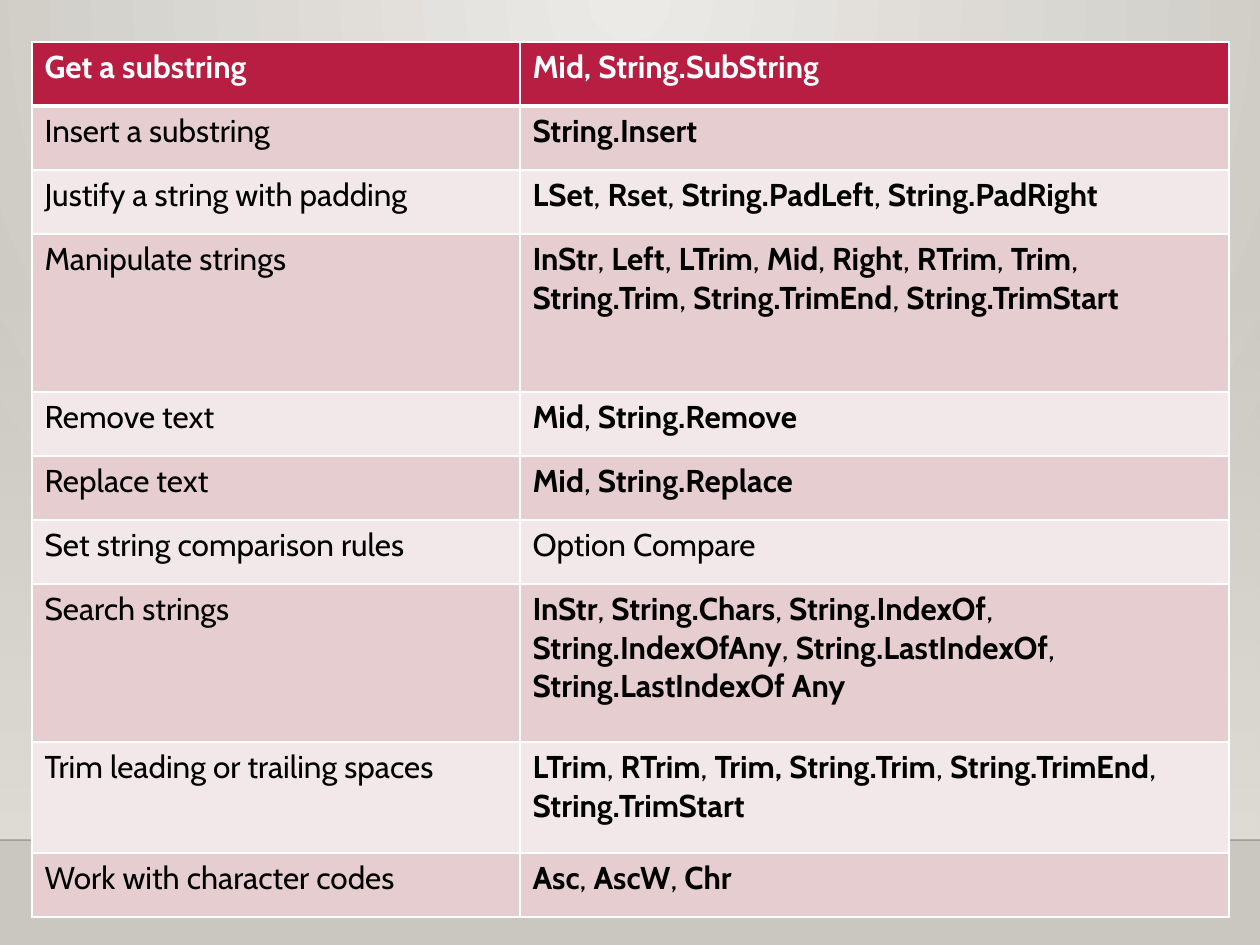
from pptx import Presentation
from pptx.dml.color import RGBColor
from pptx.enum.shapes import MSO_CONNECTOR as CONN, MSO_SHAPE as SHAPE
from pptx.oxml import parse_xml
from pptx.oxml.ns import nsdecls, qn
from pptx.util import Emu, Pt

PX = 914400 / 126
WIDTH, HEIGHT = 1260, 945
FONT = "Cabin"
CRIMSON, WHITE, BLACK = "B71E42", "FFFFFF", "000000"
BANDS = ("E6CDCF", "F3E8E9")
LINE_H, MEDIUM_H, TALL_H = 64, 111, 158

# Task, list of names, row height
HEADER = ("Get a substring", ["Mid, String.SubString"], LINE_H)
ROWS = [
    ("Insert a substring", ["String.Insert"], LINE_H),
    ("Justify a string with padding",
     ["LSet", "Rset", "String.PadLeft", "String.PadRight"], LINE_H),
    ("Manipulate strings",
     ["InStr", "Left", "LTrim", "Mid", "Right", "RTrim", "Trim",
      "String.Trim", "String.TrimEnd", "String.TrimStart"], TALL_H),
    ("Remove text", ["Mid", "String.Remove"], LINE_H),
    ("Replace text", ["Mid", "String.Replace"], LINE_H),
    ("Set string comparison rules", "Option Compare", LINE_H),
    ("Search strings",
     ["InStr", "String.Chars", "String.IndexOf", "String.IndexOfAny",
      "String.LastIndexOf", "String.LastIndexOf Any"], TALL_H),
    ("Trim leading or trailing spaces",
     ["LTrim", "RTrim", "Trim, String.Trim", "String.TrimEnd",
      "String.TrimStart"], MEDIUM_H),
    ("Work with character codes", ["Asc", "AscW", "Chr"], LINE_H),
]


def px(n):
    return Emu(round(n * PX))


def rgb(color):
    return RGBColor.from_string(color)


def set_gradient(owner, stops, shade):
    """Replace the owner's gradient; stops are (percent, colour, opacity)."""
    gs = "".join(
        f'<a:gs pos="{pos * 1000}"><a:srgbClr val="{color}">'
        f'<a:alpha val="{opacity * 1000}"/></a:srgbClr></a:gs>'
        for pos, color, opacity in stops)
    old = next(owner.iter(qn("a:gradFill")))
    old.getparent().replace(old, parse_xml(
        f'<a:gradFill {nsdecls("a")} rotWithShape="1">'
        f'<a:gsLst>{gs}</a:gsLst>{shade}</a:gradFill>'))


class Deck:
    """Holds the presentation, its style and the current slide."""

    def __init__(self):
        self.prs = Presentation()
        self.prs.slide_width, self.prs.slide_height = px(WIDTH), px(HEIGHT)
        self.s = self.prs.slides.add_slide(self.prs.slide_layouts[6])

    def background(self, inner, outer):
        self.s.background.fill.gradient()
        shade = ('<a:path path="circle"><a:fillToRect l="43000" t="0" '
                 'r="43000" b="100000"/></a:path>')
        set_gradient(self.s.background._cSld,
                     [(0, inner, 100), (100, outer, 100)], shade)

    def fade(self, x, y, w, h, color):
        """Rectangle that goes from clear at the top to solid below."""
        sp = self.s.shapes.add_shape(SHAPE.RECTANGLE, px(x), px(y), px(w), px(h))
        sp.shadow.inherit = False
        sp.line.fill.background()
        sp.fill.gradient()
        set_gradient(sp._element, [(0, color, 0), (100, color, 100)],
                     '<a:lin ang="5400000" scaled="0"/>')

    def rule(self, x1, y1, x2, y2, color, opacity):
        line = self.s.shapes.add_connector(
            CONN.STRAIGHT, px(x1), px(y1), px(x2), px(y2))
        line.line.width = Pt(1)
        line.line.color.rgb = rgb(color)
        clr = next(line._element.iter(qn("a:srgbClr")))
        clr.append(parse_xml(f'<a:alpha {nsdecls("a")} val="{opacity * 1000}"/>'))
        line._element.spPr.append(parse_xml(f'<a:effectLst {nsdecls("a")}/>'))

    def table(self, x, y, widths, header, rows):
        rows = [header, *rows]
        heights = [row[2] for row in rows]
        frame = self.s.shapes.add_table(len(rows), len(widths), px(x), px(y),
                                        px(sum(widths)), px(sum(heights)))
        table = frame.table
        for column, width in zip(table.columns, widths):
            column.width = px(width)
        for i, (task, names, height) in enumerate(rows):
            table.rows[i].height = px(height)
            fill = BANDS[(i - 1) % 2] if i else CRIMSON
            color = BLACK if i else WHITE
            for j, content in enumerate((task, names)):
                cell = table.cell(i, j)
                self.fill_text(cell, content, color, bold=i == 0)
                cell.fill.solid()
                cell.fill.fore_color.rgb = rgb(fill)
                self.borders(cell, top=3 if i == 1 else 1, bottom=1 if i else 3)

    def fill_text(self, cell, content, color, bold):
        """Write plain text, or a list of bold names with plain commas."""
        p = cell.text_frame.paragraphs[0]
        if isinstance(content, str):
            p.add_run().text = content
            p.font.bold = bold
        else:
            for k, name in enumerate(content):
                if k:
                    r = p.add_run()
                    r.text, r.font.bold = ", ", False
                r = p.add_run()
                r.text, r.font.bold = name, True
        p.font.name, p.font.size = FONT, Pt(18)
        p.font.color.rgb = rgb(color)

    def borders(self, cell, top, bottom):
        tc_pr = cell._tc.get_or_add_tcPr()
        sides = {"L": 1, "R": 1, "T": top, "B": bottom}
        for k, (side, width) in enumerate(sides.items()):
            tc_pr.insert(k, parse_xml(
                f'<a:ln{side} {nsdecls("a")} w="{Pt(width)}"><a:solidFill>'
                f'<a:srgbClr val="{WHITE}"/></a:solidFill></a:ln{side}>'))


def main():
    deck = Deck()
    deck.background("ECEAE7", "CAC7C1")
    deck.fade(0, 277, WIDTH, 563, "DFDBD5")
    deck.rule(0, 840, WIDTH, 840, "000001", 20)
    deck.table(32, 42, (488, 709), HEADER, ROWS)
    deck.prs.save("out.pptx")


if __name__ == "__main__":
    main()
